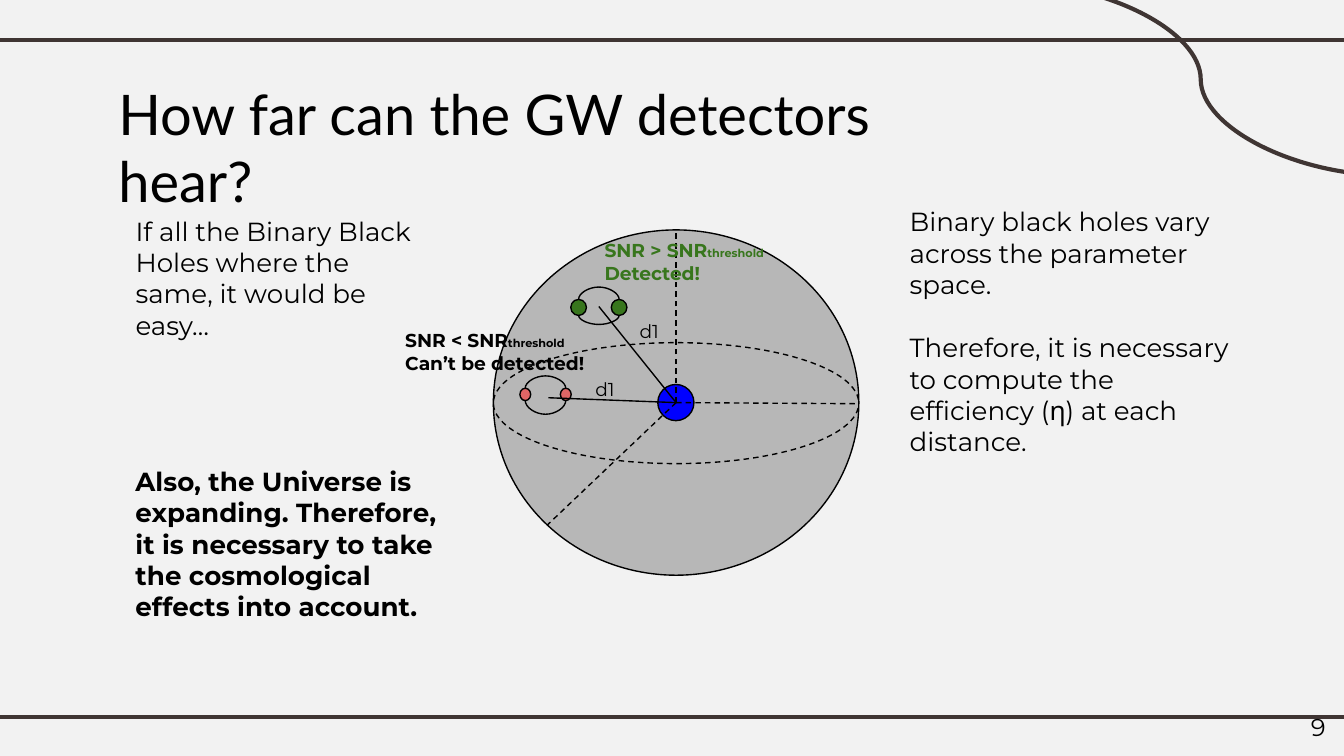
from pptx import Presentation, util as u
from pptx.dml.color import RGBColor
from pptx.enum import dml, shapes, text
from pptx.oxml.ns import qn
from lxml import etree

Pt = u.Pt
SANS, HEAD = "Montserrat", "Lato"
BLACK, GREEN, RED, BLUE = "000000", "38761D", "E06666", "0000FF"
GREY, BROWN, PAPER = "B7B7B7", "3F3533", "F2F2F2"
OVAL, ARC = shapes.MSO_SHAPE.OVAL, shapes.MSO_SHAPE.ARC
STRAIGHT, CURVE = shapes.MSO_CONNECTOR.STRAIGHT, shapes.MSO_CONNECTOR.CURVE


def rgb(hex_color):
    return RGBColor.from_string(hex_color)


def set_all(obj, values):
    for name, value in values.items():
        setattr(obj, name, value)


class Sketch:
    """Holds the current slide and the style shared by its elements."""
    frame = dict(word_wrap=True, auto_size=text.MSO_AUTO_SIZE.NONE,
                 margin_left=Pt(7.2), margin_right=Pt(7.2),
                 margin_top=Pt(7.2), margin_bottom=Pt(7.2))

    def __init__(self, s):
        self.s = s
        s.background.fill.solid()
        s.background.fill.fore_color.rgb = rgb(PAPER)

    def stroke(self, sp, color=BLACK, width=0.75, dash=False):
        sp.line.color.rgb = rgb(color)
        sp.line.width = Pt(width)
        if dash:
            sp.line.dash_style = dml.MSO_LINE.DASH

    def line(self, start, end, kind=STRAIGHT, **style):
        c = self.s.shapes.add_connector(kind, *map(Pt, start + end))
        self.stroke(c, **style)
        etree.SubElement(c._element.spPr, qn("a:effectLst"))
        return c

    def bow(self, left, right, y, depth):
        """Curve from left to right at height y, bulging down by depth."""
        thin, mid, half = 0.05, (left + right) / 2, (right - left) / 2
        c = self.line((mid - thin / 2, y - half), (mid + thin / 2, y + half), CURVE)
        sp_pr = c._element.spPr
        xfrm = sp_pr.find(qn("a:xfrm"))
        xfrm.set("rot", str(270 * 60000))
        xfrm.set("flipH", "1")
        geom = sp_pr.find(qn("a:prstGeom"))
        guides = geom.find(qn("a:avLst"))
        if guides is None:
            guides = etree.SubElement(geom, qn("a:avLst"))
        etree.SubElement(guides, qn("a:gd"), name="adj1",
                         fmla=f"val {round(depth / thin * 100000)}")

    def shape(self, box, fill=None, kind=OVAL, adjust=(), **style):
        sp = self.s.shapes.add_shape(kind, *map(Pt, box))
        sp.shadow.inherit = False
        if fill:
            sp.fill.solid()
            sp.fill.fore_color.rgb = rgb(fill)
        else:
            sp.fill.background()
        for i, value in enumerate(adjust):
            sp.adjustments[i] = value
        self.stroke(sp, **style)

    def put_text(self, sp, paragraphs, size, color=BLACK, bold=False, font=SANS,
                 align=text.PP_ALIGN.LEFT, anchor=text.MSO_ANCHOR.TOP, gap=0):
        """Fill sp; each paragraph is a list of strings or (string, size)."""
        tf = sp.text_frame
        set_all(tf, dict(self.frame, vertical_anchor=anchor))
        for i, runs in enumerate(paragraphs):
            p = tf.add_paragraph() if i else tf.paragraphs[0]
            set_all(p, dict(alignment=align, line_spacing=1.0,
                            space_before=Pt(gap if i else 0)))
            for run in runs:
                words, pts = run if isinstance(run, tuple) else (run, size)
                r = p.add_run()
                r.text = words
                set_all(r.font, dict(name=font, size=Pt(pts), bold=bold))
                r.font.color.rgb = rgb(color)

    def title(self, box, words):
        sp = self.s.shapes.title
        set_all(sp, dict(zip(("left", "top", "width", "height"), map(Pt, box))))
        self.put_text(sp, [[words]], 30, font=HEAD)

    def label(self, box, paragraphs, size, **style):
        sp = self.s.shapes.add_textbox(*map(Pt, box))
        self.put_text(sp, paragraphs, size, **style)

    def binary(self, left, y, w, h, fill, up, down):
        """Two black holes 21.7 pt apart, joined by their orbit."""
        gap = 21.7
        for x in (left, left + gap):
            self.shape((x, y, w, h), fill)
        a = left + w / 2
        self.bow(a, a + gap, y, -up)
        self.bow(a, a + gap, y + h, down)


def main():
    prs = Presentation()
    set_all(prs, dict(slide_width=Pt(720), slide_height=Pt(405)))
    k = Sketch(prs.slides.add_slide(prs.slide_layouts[5]))

    for y in (21.5, 384):
        k.line((0, y), (720, y), color=BROWN, width=2.25)
    k.line((542, -9), (744.5, 94), CURVE, color=BROWN, width=2.25)
    k.title((56.2, 35.3, 485, 45.4), "How far can the GW detectors hear?")

    # Sphere around the detector
    earth = (362.2, 215.7)
    k.shape((264.3, 123.2, 195.8, 185), GREY)
    k.shape((352.4, 206, 19.4, 19.4), BLUE)
    k.shape((264.3, 183.6, 195.8, 64.8), kind=ARC, adjust=(0.92, 0.2), dash=True)
    for end in ((460, 216.3), (362.2, 123.2), (293, 281.5)):
        k.line(earth, end, dash=True)

    # Detected and undetected binaries
    k.binary(305.8, 160.4, 8.4, 8.6, GREEN, up=5.8, down=4.3)
    k.label((316.8, 121, 108, 38.9),
            [["SNR > SNR", ("threshold", 6)], ["Detected!"]],
            10, color=GREEN, bold=True)
    k.binary(278.5, 208, 5.8, 6.6, RED, up=5.8, down=6.5)
    k.label((210, 169.2, 113.8, 38.9),
            [["SNR < SNR", ("threshold ", 6), "Can’t be detected!"]],
            10, bold=True)
    for start in ((320.8, 164.2), (293.8, 213.1)):
        k.line(start, earth)
    for x, y in ((335.5, 164.2), (311.8, 195)):
        k.label((x, y, 35.3, 26.6), [["d1"]], 10)

    # Commentary
    k.label((65.5, 108, 173.5, 82),
            [["If all the Binary Black Holes where the same, "
              "it would be easy…"]], 14)
    k.label((480.2, 103, 193, 150.5),
            [["Binary black holes vary across the parameter space."],
             ["Therefore, it is necessary to compute the efficiency (η) "
              "at each distance."]], 14, gap=17)
    k.label((65.5, 242, 177.8, 116.6),
            [["Also, the Universe is expanding. Therefore, it is necessary "
              "to take the cosmological effects into account."]],
            14, bold=True)
    k.label((674, 373.7, 43.2, 31), [["9"]], 13,
            align=text.PP_ALIGN.RIGHT, anchor=text.MSO_ANCHOR.MIDDLE)
    prs.save("out.pptx")


if __name__ == "__main__":
    main()
